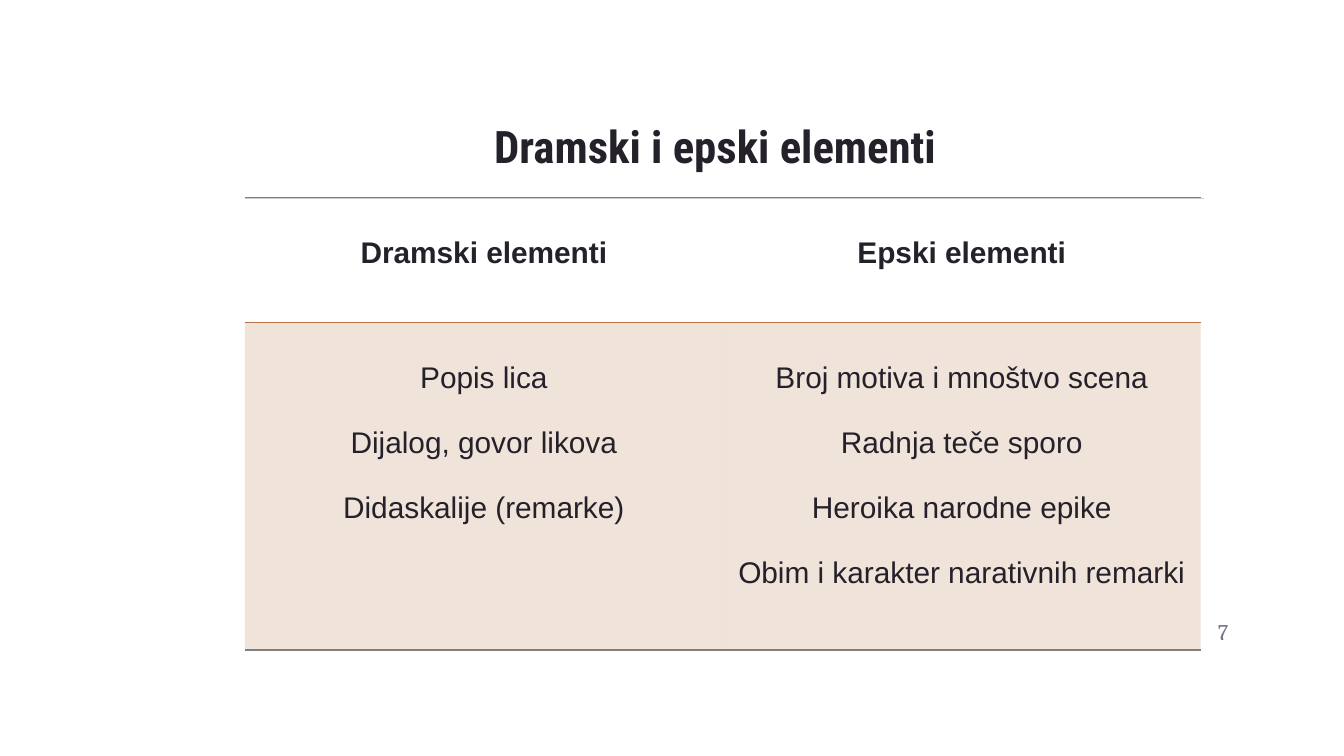
import typing

import lxml.etree
import pptx
import pptx.dml.color
import pptx.enum.shapes
import pptx.enum.text
import pptx.oxml.ns
import pptx.util

Pt = pptx.util.Pt
Align = pptx.enum.text.PP_ALIGN
Anchor = pptx.enum.text.MSO_ANCHOR
qn = pptx.oxml.ns.qn

INK, RUST, GREY, PALE = "25212A", "B87647", "808080", "CCCCCC"
PLAIN = "{2D5ABB26-0587-4C30-8999-92F81FD0307C}"  # table style without grid


class Edge(typing.NamedTuple):
    tag: str
    color: str
    width: float


class Row(typing.NamedTuple):
    height: float
    bold: bool
    tint: bool
    edges: list[Edge]
    cells: list[list[str]]


ROWS = [
    Row(67, True, False,
        [Edge("a:lnT", GREY, 0.75), Edge("a:lnB", RUST, 1)],
        [["Dramski elementi"], ["Epski elementi"]]),
    Row(175.5, False, True,
        [Edge("a:lnT", RUST, 1), Edge("a:lnB", GREY, 0.75)],
        [["Popis lica", "Dijalog, govor likova", "Didaskalije (remarke)"],
         ["Broj motiva i mnoštvo scena", "Radnja teče sporo",
          "Heroika narodne epike", "Obim i karakter narativnih remarki"]]),
]


def rgb(code: str) -> pptx.dml.color.RGBColor:
    return pptx.dml.color.RGBColor.from_string(code)


def apply(item: typing.Any, form: dict[str, typing.Any]) -> None:
    for name, value in form.items():
        setattr(item, name, value)


def write(frame: typing.Any, lines: list[str], color: str, align: Align,
          gap: float, **form: typing.Any) -> None:
    for i, line in enumerate(lines):
        para = frame.add_paragraph() if i else frame.paragraphs[0]
        para.text = line
        apply(para, {"alignment": align, "line_spacing": 1.0,
                     "space_before": Pt(gap if i else 0)})
        font = para.runs[0].font
        apply(font, form)
        font.color.rgb = rgb(color)


def setup(frame: typing.Any, anchor: Anchor) -> None:
    inset = Pt(7.2)
    apply(frame, {"word_wrap": True, "vertical_anchor": anchor,
                  "auto_size": pptx.enum.text.MSO_AUTO_SIZE.NONE,
                  "margin_left": inset, "margin_right": inset,
                  "margin_top": inset, "margin_bottom": inset})


def border(cell: typing.Any, edge: Edge) -> None:
    props = cell._tc.get_or_add_tcPr()
    line = lxml.etree.SubElement(props, qn(edge.tag), w=str(Pt(edge.width)))
    fill = lxml.etree.SubElement(line, qn("a:solidFill"))
    lxml.etree.SubElement(fill, qn("a:srgbClr"), val=edge.color)


def shade(cell: typing.Any, tint: bool) -> None:
    if not tint:
        cell.fill.background()
        return
    cell.fill.solid()
    cell.fill.fore_color.rgb = rgb(RUST)
    color = cell._tc.tcPr.find(qn("a:solidFill")).find(qn("a:srgbClr"))
    lxml.etree.SubElement(color, qn("a:alpha"), val="20000")


def grid(slide: typing.Any) -> None:
    frame = slide.shapes.add_table(len(ROWS), 2, Pt(131.25), Pt(105.75),
                                   Pt(512), Pt(242.5))
    table = frame.table
    apply(table, {"first_row": False, "horz_banding": False})
    next(frame._element.iter(qn("a:tableStyleId"))).text = PLAIN
    for col in table.columns:
        col.width = Pt(256)
    for r, row in enumerate(ROWS):
        table.rows[r].height = Pt(row.height)
        for c, lines in enumerate(row.cells):
            cell = table.cell(r, c)
            apply(cell, {"margin_top": Pt(21), "margin_bottom": Pt(3.6),
                         "vertical_anchor": Anchor.TOP})
            for edge in row.edges:
                border(cell, edge)
            shade(cell, row.tint)
            write(cell.text_frame, lines, INK, Align.CENTER, 17.1,
                  name="Arial", size=Pt(16), bold=row.bold)


def main() -> None:
    deck = pptx.Presentation()
    apply(deck, {"slide_width": Pt(720), "slide_height": Pt(405)})
    slide = deck.slides.add_slide(deck.slide_layouts[5])

    # Rule under the title
    rule = slide.shapes.add_connector(
        pptx.enum.shapes.MSO_CONNECTOR.STRAIGHT,
        Pt(131.25), Pt(106.5), Pt(645), Pt(106.5))
    rule.line.color.rgb = rgb(PALE)
    rule.line.width = Pt(0.75)
    lxml.etree.SubElement(rule._element.spPr, qn("a:effectLst"))

    # Title
    title = slide.shapes.title
    apply(title, {"left": Pt(122.4), "top": Pt(44), "width": Pt(521.3),
                  "height": Pt(55.4)})
    setup(title.text_frame, Anchor.BOTTOM)
    write(title.text_frame, ["Dramski i epski elementi"], INK, Align.CENTER,
          0, name="Roboto Condensed", size=Pt(24), bold=True)

    # Page number
    page = slide.shapes.add_textbox(Pt(622), Pt(322.6), Pt(43.2), Pt(31))
    setup(page.text_frame, Anchor.MIDDLE)
    write(page.text_frame, ["7"], "797281", Align.RIGHT, 0,
          name="Cambria", size=Pt(12))

    # Comparison table
    grid(slide)

    deck.save("out.pptx")


if __name__ == "__main__":
    main()
